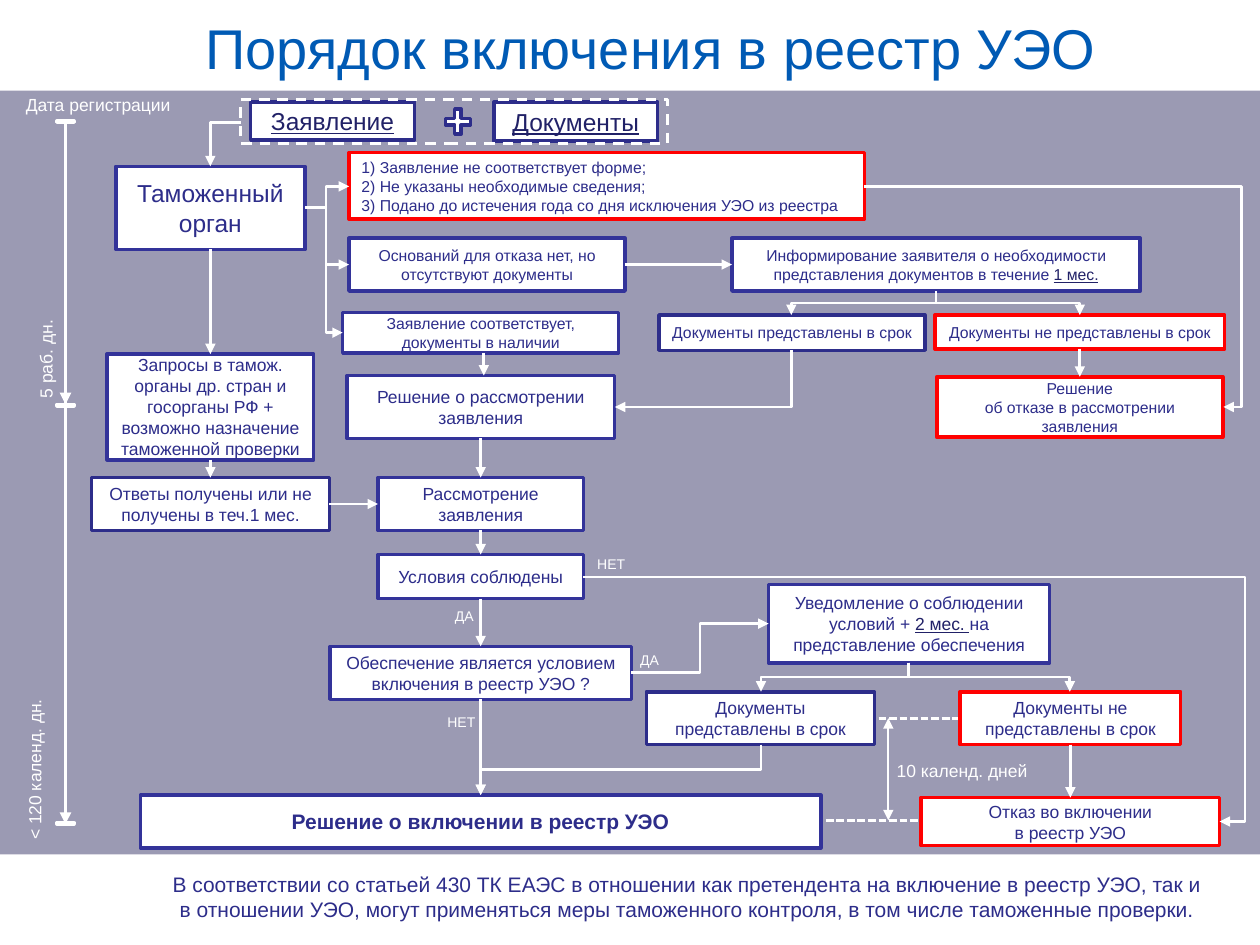
"""Flowchart slide: how a company enters the register of authorised economic operators."""
from lxml.etree import SubElement
from pptx import Presentation
from pptx.dml.color import RGBColor
from pptx.enum.dml import MSO_LINE
from pptx.enum.shapes import MSO_CONNECTOR as CXN, MSO_SHAPE as SHAPE
from pptx.enum.text import MSO_ANCHOR as ANCHOR, MSO_AUTO_SIZE as FIT, PP_ALIGN as ALIGN
from pptx.oxml.ns import qn
from pptx.util import Inches, Pt

rgb = RGBColor.from_string
WHITE, RED, BLUE, NAVY, INK = "FFFFFF", "FF0000", "333399", "2D2D8A", "212167"

prs = Presentation()
prs.slide_width, prs.slide_height = Inches(10), Inches(7.5)
CELL = prs.slide_width // 100
s = prs.slides.add_slide(prs.slide_layouts[5])
s.background.fill.solid()
s.background.fill.fore_color.rgb = rgb("9B9AB3")


def write(sp, text, size, color, align=ALIGN.CENTER, bold=False):
    """Fill a shape with paragraphs; words between underscores are underlined."""
    tf = sp.text_frame
    tf.word_wrap = True
    for i, line in enumerate(text.split("\n")):
        p = tf.paragraphs[0] if i == 0 else tf.add_paragraph()
        p.alignment = align
        for j, part in enumerate(line.split("_")):
            if part:
                r = p.add_run()
                r.text = part
                r.font.name, r.font.size, r.font.bold = "Arial", Pt(size), bold
                r.font.underline = j % 2 == 1
                r.font.color.rgb = rgb(INK if j % 2 else color)


def wire(kind, points, width=1.5, ends=("tailEnd",), dash=None):
    """Draw a white connector through x1, y1, x2, y2 given in grid cells."""
    c = s.shapes.add_connector(kind, *[round(v * CELL) for v in points])
    c.line.color.rgb, c.line.width = rgb(WHITE), Pt(width)
    if dash:
        c.line.dash_style = dash
    sppr = c._element.spPr
    for end in ends:
        SubElement(sppr.find(qn("a:ln")), qn("a:" + end), type="triangle")
    SubElement(sppr, qn("a:effectLst"))
    return c


for top in (0, 67.8):
    sp = s.shapes.add_shape(SHAPE.RECTANGLE, 0, round(top * CELL), prs.slide_width, round(7.2 * CELL))
    sp.shadow.inherit = False
    sp.fill.solid()
    sp.fill.fore_color.rgb = rgb(WHITE)
    sp.line.fill.background()
    s.shapes._spTree.insert(2, sp._element)

title = s.shapes.title
title.left, title.top, title.width, title.height = [round(v * CELL) for v in (15.3, 0.4, 73.5, 6.7)]
title.text_frame.auto_size = FIT.NONE
title.text_frame.vertical_anchor = ANCHOR.MIDDLE
write(title, "Порядок включения в реестр УЭО", 32, "005AB4", ALIGN.LEFT)

for y in (57, 65.1):
    wire(CXN.STRAIGHT, (52.2, y, 93.1, y), ends=(), dash=MSO_LINE.SQUARE_DOT)

boxes = {
    "application": (19.9, 8.1, 13, 3, NAVY, 14, "_Заявление_"),
    "documents": (39.2, 8.1, 13, 3.1, NAVY, 14, "_Документы_"),
    "customs": (9.2, 13.2, 15, 6.6, BLUE, 14, "Таможенный орган"),
    "reasons": (27.7, 12.1, 40.9, 5.3, RED, 9,
                "1) Заявление не соответствует форме;\n2) Не указаны необходимые сведения;\n"
                "3) Подано до истечения года со дня исключения УЭО из реестра"),
    "missing": (27.7, 18.9, 21.9, 4.2, BLUE, 9, "Оснований для отказа нет, но отсутствуют документы"),
    "inform": (58.1, 18.9, 32.4, 4.2, BLUE, 9,
               "Информирование заявителя о необходимости\nпредставления документов в течение _1 мес._"),
    "complete": (27.2, 24.8, 21.9, 3.2, BLUE, 9, "Заявление соответствует, документы в наличии"),
    "in_time": (52.3, 25, 21.1, 2.8, NAVY, 9, "Документы представлены в срок"),
    "late": (74.2, 25, 23, 2.7, RED, 9, "Документы не представлены в срок"),
    "accept": (27.55, 29.8, 21.2, 5, BLUE, 10, "Решение о рассмотрении заявления"),
    "decline": (74.35, 29.9, 22.7, 4.8, RED, 9, "Решение\nоб отказе в рассмотрении заявления"),
    "requests": (8.5, 28.1, 16.4, 8.4, BLUE, 10,
                 "Запросы в тамож. органы др. стран и госорганы РФ +\n"
                 "возможно назначение\nтаможенной проверки"),
    "answers": (7.25, 37.9, 18.9, 4.2, NAVY, 10, "Ответы получены или не получены в теч.1 мес."),
    "review": (30, 37.9, 16.3, 4.2, BLUE, 10, "Рассмотрение заявления"),
    "conditions": (30, 44, 16.3, 3.5, BLUE, 10, "Условия соблюдены"),
    "security": (26.2, 51.3, 23.9, 4.2, BLUE, 10, "Обеспечение является условием включения в реестр УЭО ?"),
    "notice": (61, 46.4, 22.3, 6.2, BLUE, 10,
               "Уведомление о соблюдении условий + _2 мес. _на представление обеспечения"),
    "secured": (51.3, 54.9, 18.1, 4.2, NAVY, 10, "Документы представлены в срок"),
    "unsecured": (76.2, 54.9, 17.5, 4.2, RED, 10, "Документы не представлены в срок"),
    "refusal": (73.1, 63.3, 23.7, 3.8, RED, 10, "Отказ во включении\nв реестр УЭО"),
    "inclusion": (11.15, 63.1, 54, 4.2, BLUE, 12, "Решение о включении в реестр УЭО"),
}
shapes = {}
for name, (*place, edge, size, text) in boxes.items():
    sp = shapes[name] = s.shapes.add_shape(SHAPE.FLOWCHART_PROCESS, *[round(v * CELL) for v in place])
    sp.shadow.inherit = False
    sp.fill.solid()
    sp.fill.fore_color.rgb = rgb(WHITE)
    sp.line.color.rgb, sp.line.width = rgb(edge), Pt(2)
    sp.text_frame.vertical_anchor = ANCHOR.MIDDLE
    write(sp, text, size, NAVY, ALIGN.LEFT if name == "reasons" else ALIGN.CENTER, name == "inclusion")

marks = [(SHAPE.MATH_MINUS, (4.3, y, 1.8, 0.5), WHITE, 2, None) for y in (9.4, 31.9, 65.1)]
marks += [(SHAPE.MATH_PLUS, (35, 8.3, 2.7, 2.7), NAVY, 2, None),
          (SHAPE.RECTANGLE, (19.1, 7.9, 33.9, 3.5), WHITE, 1.5, MSO_LINE.DASH)]
for kind, place, edge, width, dash in marks:
    sp = s.shapes.add_shape(kind, *[round(v * CELL) for v in place])
    sp.shadow.inherit = False
    sp.line.color.rgb, sp.line.width = rgb(edge), Pt(width)
    if dash:
        sp.fill.background()
        sp.line.dash_style = dash
    else:
        sp.fill.solid()
        sp.fill.fore_color.rgb = rgb(WHITE)
    if kind == SHAPE.MATH_PLUS:
        sp.adjustments[0] = 0.19

BOTTOM, RIGHT = (2, 0), (3, 1)
for start, end, (out, into) in [
    ("customs", "requests", BOTTOM), ("requests", "answers", BOTTOM), ("answers", "review", RIGHT),
    ("missing", "inform", RIGHT), ("late", "decline", BOTTOM), ("accept", "review", BOTTOM),
    ("review", "conditions", BOTTOM), ("conditions", "security", BOTTOM),
    ("security", "inclusion", BOTTOM), ("unsecured", "refusal", BOTTOM),
]:
    c = wire(CXN.STRAIGHT, (0, 0, 0, 0))
    c.begin_connect(shapes[start], out)
    c.end_connect(shapes[end], into)

wire(CXN.STRAIGHT, (38.4, 28, 38.4, 29.8))
wire(CXN.STRAIGHT, (70.5, 65.1, 70.5, 57), 1, ("headEnd", "tailEnd"))
wire(CXN.STRAIGHT, (5.2, 9.6, 5.2, 32.1), 2.25, dash=MSO_LINE.SQUARE_DOT)
wire(CXN.STRAIGHT, (5.2, 9.6, 5.2, 65.4), 2.25)

for points, bend in [
    ((24.2, 16.5, 27.7, 14.8), 0.48), ((24.2, 16.5, 27.7, 21), 0.48), ((24.2, 16.5, 27.2, 26.4), 0.56),
    ((50.1, 53.4, 61, 49.5), 0.5), ((46.3, 45.8, 96.8, 65.2), 1.04), ((68.6, 14.8, 97.1, 32.3), 1.05),
    ((19.1, 9.7, 16.7, 13.2), None),
]:
    geom = wire(CXN.ELBOW, points)._element.spPr.find(qn("a:prstGeom"))
    if bend is None:
        geom.set("prst", "bentConnector2")
    else:
        SubElement(geom.find(qn("a:avLst")), qn("a:gd"), name="adj1", fmla=f"val {round(bend * 100000)}")

for x1, y1, x2, y2, preset in [
    (74.3, 23.1, 62.8, 25, "bentConnector3"), (74.3, 23.1, 85.7, 25, "bentConnector3"),
    (72.1, 52.6, 60.4, 54.9, "bentConnector3"), (72.1, 52.6, 84.9, 54.9, "bentConnector3"),
    (60.4, 59.1, 38.15, 63.1, "bentConnector3"), (62.8, 27.8, 48.8, 32.3, "bentConnector2"),
]:
    x, y, run, drop = (x1 + x2) / 2, (y1 + y2) / 2, abs(x2 - x1) / 2, (y2 - y1) / 2
    side = 1 if x2 < x1 else -1
    sppr = wire(CXN.ELBOW, (x - side * drop, y - run, x + side * drop, y + run))._element.spPr
    sppr.find(qn("a:xfrm")).set("rot", "5400000" if side == 1 else "16200000")
    sppr.find(qn("a:prstGeom")).set("prst", preset)

for place, text, size, color, align, inset, vert in [
    ((0.8, 7, 13.7, 1.9), "Дата регистрации", 10, WHITE, ALIGN.RIGHT, True, None),
    ((2.8, 25.4, 2, 6.7), "5 раб. дн.", 10, WHITE, ALIGN.RIGHT, False, "vert270"),
    ((1.9, 55.5, 2.4, 11.8), "< 120 календ. дн.", 10, WHITE, ALIGN.RIGHT, False, "vert270"),
    ((70.3, 60.3, 12.1, 1.7), "10 календ. дней", 10, WHITE, ALIGN.CENTER, False, None),
    ((36.1, 48.2, 2, 1.3), "ДА", 8, WHITE, ALIGN.LEFT, False, None),
    ((50.8, 51.7, 2, 1.3), "ДА", 8, WHITE, ALIGN.LEFT, False, None),
    ((47.4, 44.1, 2.4, 1.3), "НЕТ", 8, WHITE, ALIGN.LEFT, False, None),
    ((35.5, 56.6, 2.4, 1.3), "НЕТ", 8, WHITE, ALIGN.LEFT, False, None),
    ((12.3, 68.7, 84.5, 5), "В соответствии со статьей 430 ТК ЕАЭС в отношении как претендента на включение "
     "в реестр УЭО, так и в отношении УЭО, могут применяться меры таможенного контроля, "
     "в том числе таможенные проверки.", 12, NAVY, ALIGN.CENTER, True, None),
]:
    sp = s.shapes.add_textbox(*[round(v * CELL) for v in place])
    tf = sp.text_frame
    if not inset:
        tf.margin_left = tf.margin_top = tf.margin_right = tf.margin_bottom = 0
    if vert:
        tf._txBody.bodyPr.set("vert", vert)
    write(sp, text, size, color, align)

prs.save("out.pptx")
